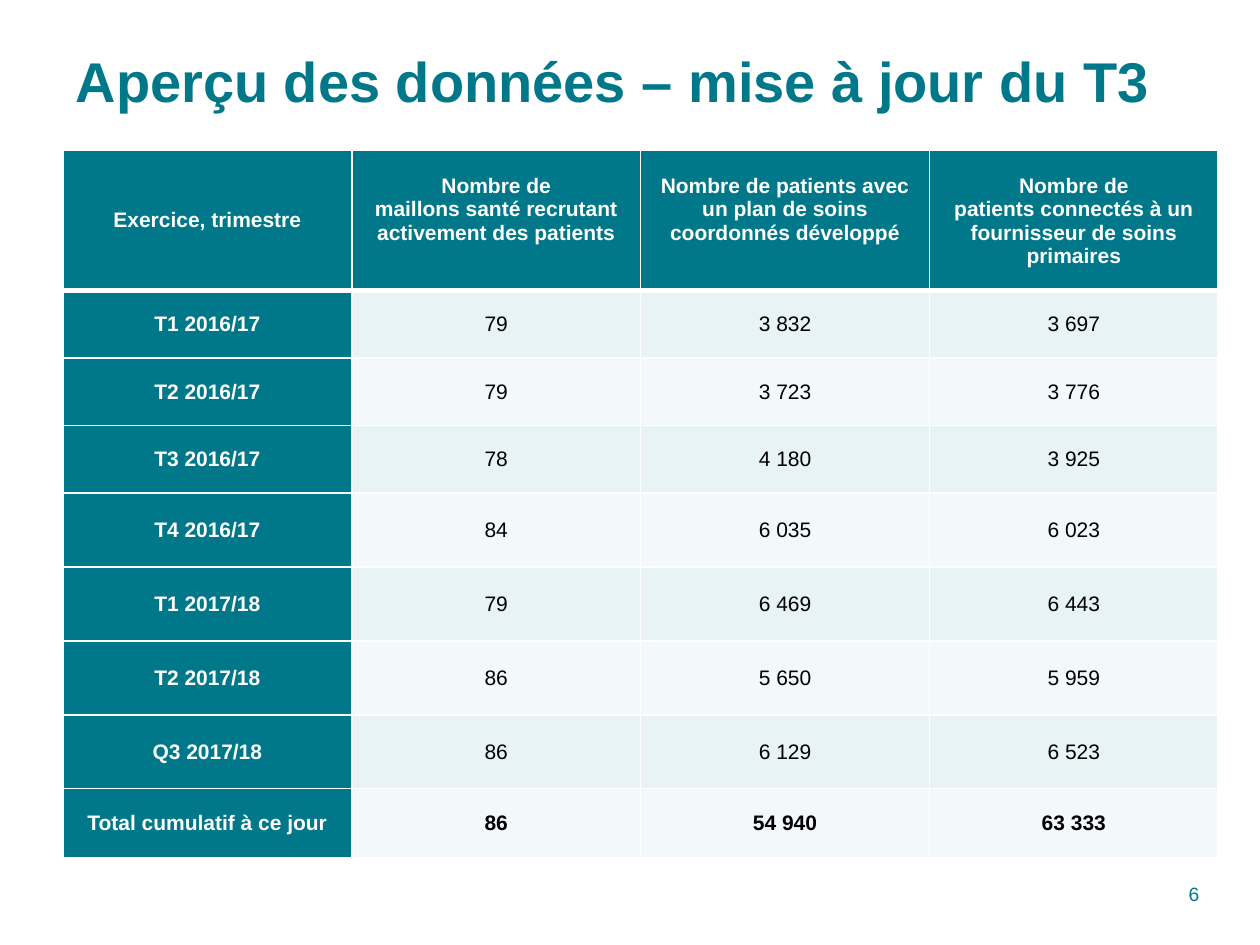
from dataclasses import dataclass

from lxml.etree import SubElement
from pptx import Presentation
from pptx.dml.color import RGBColor
from pptx.enum.text import MSO_ANCHOR, PP_ALIGN
from pptx.oxml.ns import qn
from pptx.util import Cm, Pt


@dataclass(frozen=True)
class Theme:
    font: str = "Arial"
    teal: str = "00788A"
    white: str = "FFFFFF"
    black: str = "000000"
    bands: tuple = ("E7F3F4", "F3F9FA")
    title: int = 32
    body: int = 12
    small: int = 11
    rule: int = 1
    heavy: int = 3


THEME = Theme()

TITLE = "Aperçu des données – mise à jour du T3"
HEADS = [
    ["Exercice, trimestre"],
    ["Nombre de", "maillons santé recrutant activement des patients"],
    ["Nombre de patients avec", "un plan de soins coordonnés développé"],
    ["Nombre de", "patients connectés à un", "fournisseur de soins primaires"],
]
ROWS = [
    ("T1 2016/17", "79", "3 832", "3 697"),
    ("T2 2016/17", "79", "3 723", "3 776"),
    ("T3 2016/17", "78", "4 180", "3 925"),
    ("T4 2016/17", "84", "6 035", "6 023"),
    ("T1 2017/18", "79", "6 469", "6 443"),
    ("T2 2017/18", "86", "5 650", "5 959"),
    ("Q3 2017/18", "86", "6 129", "6 523"),
    ("Total cumulatif à ce jour", "86", "54 940", "63 333"),
]
HEIGHTS = [2.84] + [1.36] * 3 + [1.49] * 4 + [1.4]
LEFT, WIDTH = 1.27, 23.29


def write(frame, lines, size=THEME.body, color=THEME.black, bold=False,
          align=PP_ALIGN.CENTER, spacing=None):
    """Fill a text frame with one paragraph for each line."""
    frame.word_wrap = True
    for i, line in enumerate(lines):
        para = frame.paragraphs[0] if i == 0 else frame.add_paragraph()
        para.alignment = align
        if spacing:
            para.line_spacing = spacing
        run = para.add_run()
        run.text = line
        font = run.font
        font.name, font.size, font.bold = THEME.font, Pt(size), bold
        font.color.rgb = RGBColor.from_string(color)


def edge(cell, **widths):
    """Draw white borders; the keys L, R, T and B name the sides."""
    props = cell._tc.get_or_add_tcPr()
    for i, side in enumerate("LRTB"):
        width = Pt(widths.get(side, THEME.rule))
        line = SubElement(props, qn(f"a:ln{side}"), w=str(width))
        fill = SubElement(line, qn("a:solidFill"))
        SubElement(fill, qn("a:srgbClr"), val=THEME.white)
        props.insert(i, line)


def style(cell, fill, top=0):
    cell.fill.solid()
    cell.fill.fore_color.rgb = RGBColor.from_string(fill)
    cell.margin_left = cell.margin_right = Cm(0.18)
    cell.margin_top, cell.margin_bottom = Cm(top), 0
    cell.vertical_anchor = MSO_ANCHOR.TOP if top else MSO_ANCHOR.MIDDLE


def add_title(slide):
    title = slide.shapes.title
    title.left, title.top = Cm(LEFT), Cm(0.81)
    title.width, title.height = Cm(WIDTH), Cm(1.45)
    frame = title.text_frame
    frame.vertical_anchor = MSO_ANCHOR.TOP
    frame.margin_top = Cm(0.18)
    write(frame, [TITLE], size=THEME.title, color=THEME.teal, bold=True,
          align=PP_ALIGN.LEFT, spacing=Pt(37.2))


def add_grid(slide):
    table = slide.shapes.add_table(
        len(HEIGHTS), len(HEADS), Cm(LEFT), Cm(3.02),
        Cm(WIDTH), Cm(sum(HEIGHTS))).table
    for col in table.columns:
        col.width = Cm(WIDTH / len(HEADS))
    for row, height in zip(table.rows, HEIGHTS):
        row.height = Cm(height)

    for c, lines in enumerate(HEADS):
        cell = table.cell(0, c)
        style(cell, THEME.teal, top=0.49 if c else 0)
        edge(cell, B=THEME.heavy)
        write(cell.text_frame, lines, color=THEME.white, bold=True)

    for r, values in enumerate(ROWS, 1):
        total = r == len(ROWS)
        for c, value in enumerate(values):
            cell = table.cell(r, c)
            label = c == 0
            style(cell, THEME.teal if label else THEME.bands[(r - 1) % 2])
            edge(cell, T=THEME.heavy if r == 1 else THEME.rule)
            write(cell.text_frame, [value], bold=label or total,
                  color=THEME.white if label else THEME.black)


def add_number(slide):
    box = slide.shapes.add_textbox(Cm(21.46), Cm(17.65), Cm(2.97), Cm(0.74))
    box.text_frame.vertical_anchor = MSO_ANCHOR.MIDDLE
    write(box.text_frame, ["6"], size=THEME.small, color=THEME.teal,
          align=PP_ALIGN.RIGHT)


def main():
    deck = Presentation()
    deck.slide_width, deck.slide_height = Cm(25.4), Cm(19.05)
    slide = deck.slides.add_slide(deck.slide_layouts[5])
    add_title(slide)
    add_grid(slide)
    add_number(slide)
    deck.save("out.pptx")


if __name__ == "__main__":
    main()
